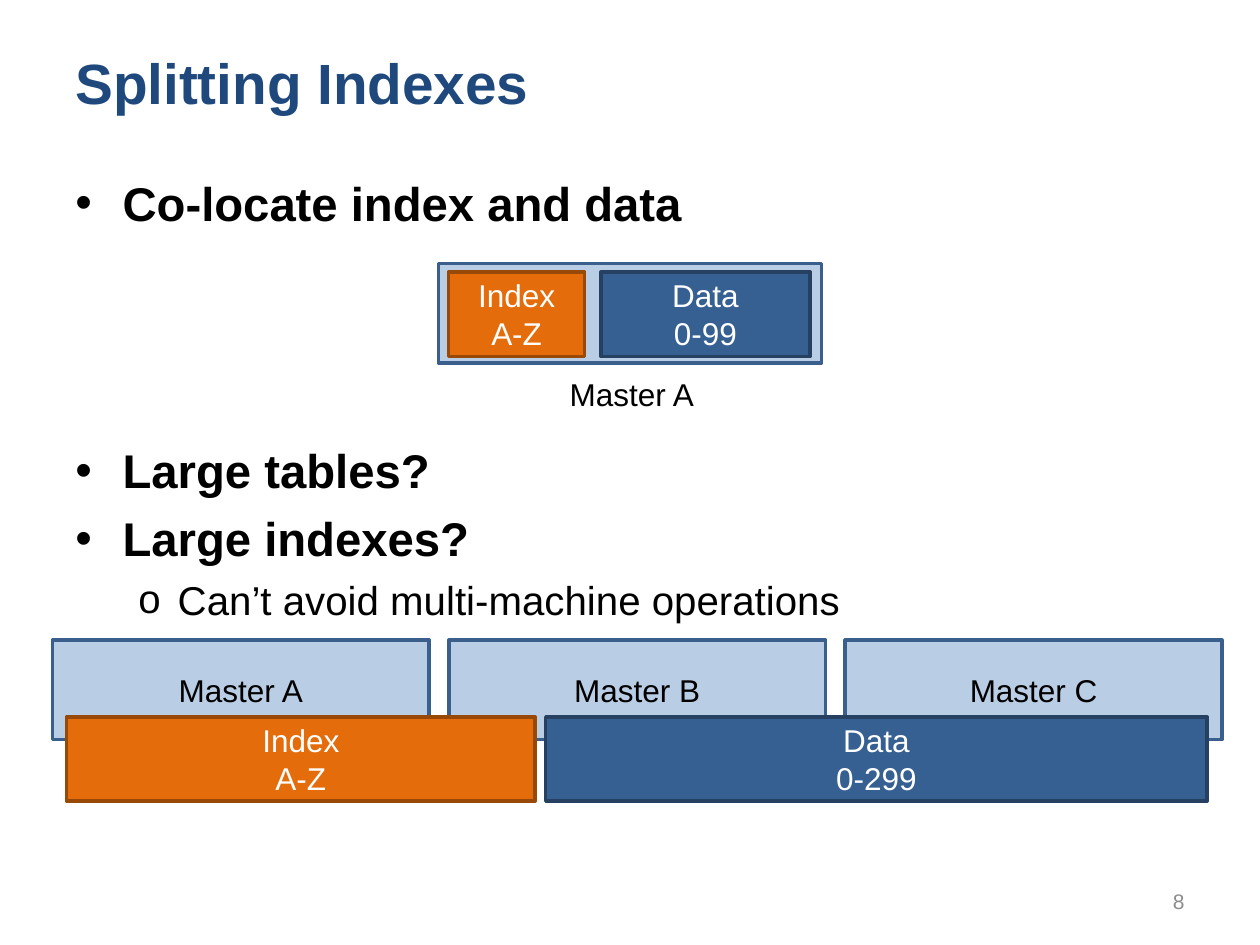
from dataclasses import dataclass

from lxml.etree import SubElement
from pptx import Presentation
from pptx.dml.color import RGBColor
from pptx.enum.shapes import MSO_SHAPE
from pptx.enum.text import MSO_ANCHOR, PP_ALIGN
from pptx.oxml.ns import qn
from pptx.util import Pt

FONT = "Arial"
WHITE = RGBColor(0xFF, 0xFF, 0xFF)
BLACK = RGBColor(0, 0, 0)
GRAY = RGBColor(0x8C, 0x8C, 0x8C)
TITLE_BLUE = RGBColor(0x1F, 0x49, 0x7D)


@dataclass(frozen=True)
class Style:
    fill: RGBColor
    line: RGBColor
    text: RGBColor


@dataclass(frozen=True)
class Box:
    left: float
    top: float
    width: float
    height: float
    style: Style
    lines: tuple[str, ...] = ()


@dataclass(frozen=True)
class Bullet:
    text: str
    before: float
    char: str = "•"
    size: float = 27
    bold: bool = True
    margin: float = 27
    hang: float = 27
    level: int = 0


MASTER = Style(RGBColor(0xB9, 0xCD, 0xE5), RGBColor(0x3A, 0x5F, 0x8C), BLACK)
INDEX = Style(RGBColor(0xE4, 0x6C, 0x0A), RGBColor(0x98, 0x48, 0x07), WHITE)
DATA = Style(RGBColor(0x37, 0x60, 0x92), RGBColor(0x25, 0x40, 0x61), WHITE)

MASTER_H, PART_H = 56.9, 48.2


def add_run(p, text: str, size: float, color: RGBColor, bold: bool = False) -> None:
    r = p.add_run()
    r.text = text
    r.font.name = FONT
    r.font.size = Pt(size)
    r.font.bold = bold
    r.font.color.rgb = color


def add_text_frame(s, left: float, top: float, width: float, height: float,
                   anchor=MSO_ANCHOR.TOP):
    tf = s.shapes.add_textbox(Pt(left), Pt(top), Pt(width), Pt(height)).text_frame
    tf.word_wrap = True
    tf.vertical_anchor = anchor
    return tf


def add_label(s, left: float, top: float, width: float, height: float, text: str,
              size: float, color: RGBColor, align=PP_ALIGN.LEFT,
              anchor=MSO_ANCHOR.MIDDLE, bold: bool = False) -> None:
    p = add_text_frame(s, left, top, width, height, anchor).paragraphs[0]
    p.alignment = align
    add_run(p, text, size, color, bold)


def add_bullet(p, item: Bullet) -> None:
    p.level = item.level
    p.space_before = Pt(item.before)
    pPr = p._p.get_or_add_pPr()
    pPr.set("marL", str(Pt(item.margin)))
    pPr.set("indent", str(-Pt(item.hang)))
    SubElement(pPr, qn("a:buFont"), typeface=FONT)
    SubElement(pPr, qn("a:buChar"), char=item.char)
    add_run(p, item.text, item.size, BLACK, item.bold)


def add_diagram(s, boxes: list[Box]) -> None:
    group = s.shapes.add_group_shape()
    for box in boxes:
        sp = group.shapes.add_shape(MSO_SHAPE.RECTANGLE, Pt(box.left), Pt(box.top),
                                    Pt(box.width), Pt(box.height))
        sp.shadow.inherit = False
        sp.fill.solid()
        sp.fill.fore_color.rgb = box.style.fill
        sp.line.color.rgb = box.style.line
        sp.line.width = Pt(2)
        tf = sp.text_frame
        tf.word_wrap = True
        tf.vertical_anchor = MSO_ANCHOR.MIDDLE
        for i, line in enumerate(box.lines):
            p = tf.add_paragraph() if i else tf.paragraphs[0]
            p.alignment = PP_ALIGN.CENTER
            add_run(p, line, 18, box.style.text)


def main() -> None:
    prs = Presentation()
    prs.slide_width, prs.slide_height = Pt(720), Pt(540)
    s = prs.slides.add_slide(prs.slide_layouts[6])

    # Title
    add_label(s, 36, 21.6, 648, 50.4, "Splitting Indexes", 32.4, TITLE_BLUE, bold=True)

    # Bullets, with room for the first diagram after the first one
    bullets = [
        Bullet("Co-locate index and data", 6.5),
        Bullet("Large tables?", 120.4),
        Bullet("Large indexes?", 6.5),
        Bullet("Can’t avoid multi-machine operations", 5.5, "o", 23, False, 58.5, 22.5, 1),
    ]
    tf = add_text_frame(s, 36, 95.8, 648, 415.4)
    for i, item in enumerate(bullets):
        add_bullet(tf.add_paragraph() if i else tf.paragraphs[0], item)

    # Index and data on one master
    add_diagram(s, [
        Box(250.6, 150.5, 218.9, MASTER_H, MASTER),
        Box(256.3, 155.5, 77.8, PART_H, INDEX, ("Index", "A-Z")),
        Box(343.4, 155.5, 119.5, PART_H, DATA, ("Data", "0-99")),
    ])

    # Index and data spread over three masters
    masters = [Box(30 + 226.5 * i, 365.8, 215.3, MASTER_H, MASTER, (f"Master {name}",))
               for i, name in enumerate("ABC")]
    add_diagram(s, masters + [
        Box(311.8, 409.7, 378, PART_H, DATA, ("Data", "0-299")),
        Box(38, 409.7, 267.8, PART_H, INDEX, ("Index", "A-Z")),
    ])

    # Page number and caption of the first diagram
    add_label(s, 516.2, 500.4, 167.8, 28.8, "8", 12, GRAY, PP_ALIGN.RIGHT)
    add_label(s, 250.6, 211, 221, 28.8, "Master A", 18, BLACK, PP_ALIGN.CENTER,
              MSO_ANCHOR.TOP)

    prs.save("out.pptx")


if __name__ == "__main__":
    main()
